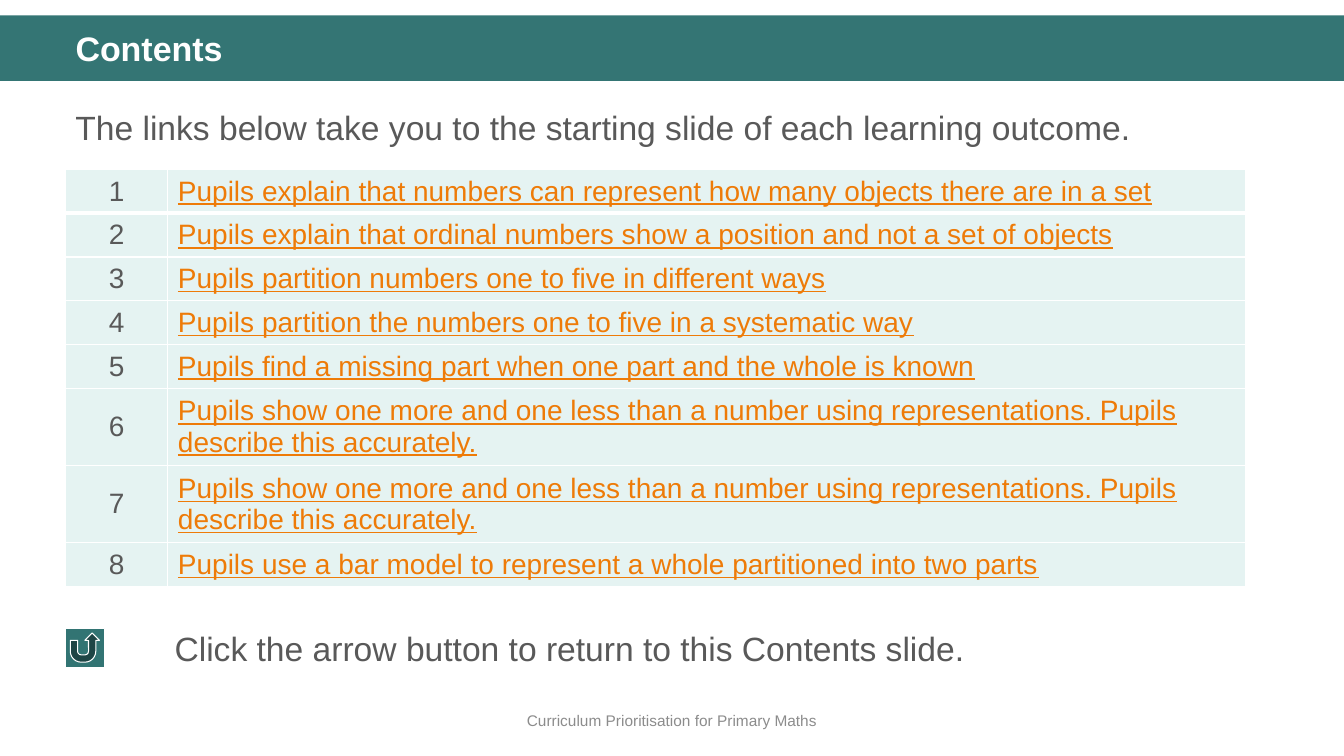
import pptx
import pptx.dml.color
import pptx.enum.shapes
import pptx.enum.text
import pptx.oxml
import pptx.oxml.ns
import pptx.util

Cm = pptx.util.Cm
Pt = pptx.util.Pt
RGBColor = pptx.dml.color.RGBColor
SHAPE = pptx.enum.shapes.MSO_SHAPE
ALIGN = pptx.enum.text.PP_ALIGN
ANCHOR = pptx.enum.text.MSO_ANCHOR

BAND_TEAL = RGBColor(0x34, 0x75, 0x74)
BUTTON_TEAL = RGBColor(0x32, 0x74, 0x73)
PALE_TEAL = RGBColor(0xE5, 0xF3, 0xF2)
ORANGE = RGBColor(0xEE, 0x7B, 0x08)
DARK_GREY = RGBColor(0x59, 0x59, 0x59)
FOOTER_GREY = RGBColor(0x8C, 0x8C, 0x8C)
WHITE = RGBColor(0xFF, 0xFF, 0xFF)

LEFT = 1.65
OUTCOMES = [
    "Pupils explain that numbers can represent how many objects there are in a set",
    "Pupils explain that ordinal numbers show a position and not a set of objects",
    "Pupils partition numbers one to five in different ways",
    "Pupils partition the numbers one to five in a systematic way",
    "Pupils find a missing part when one part and the whole is known",
    "Pupils show one more and one less than a number using representations. Pupils describe this accurately.",
    "Pupils show one more and one less than a number using representations. Pupils describe this accurately.",
    "Pupils use a bar model to represent a whole partitioned into two parts",
]


class ContentsPage:
    """Holds the style and the current slide, and adds each kind of element."""

    font_name = "Arial"

    def __init__(self, deck):
        """Add a title-only slide to the deck."""
        self.page = deck.slides.add_slide(deck.slide_layouts[5])

    def fill_text(self, frame, text, size, color, align=ALIGN.LEFT, spacing=1.0, bold=False, underline=False):
        """Fill a text frame with one styled paragraph."""
        frame.word_wrap = True
        para = frame.paragraphs[0]
        para.text = text
        para.alignment = align
        para.line_spacing = spacing
        para.space_before = Pt(0)
        font = para.font
        font.name = self.font_name
        font.size = Pt(size)
        font.color.rgb = color
        font.bold = bold
        font.underline = underline

    def title(self, text, left, top, width, height):
        """Place the title in front of the shapes added so far."""
        title = self.page.shapes.title
        title.left, title.top, title.width, title.height = Cm(left), Cm(top), Cm(width), Cm(height)
        title.text_frame.vertical_anchor = ANCHOR.TOP
        title.text_frame.auto_size = pptx.enum.text.MSO_AUTO_SIZE.NONE
        self.fill_text(title.text_frame, text, 24.3, WHITE, spacing=0.9, bold=True)
        title.element.getparent().append(title.element)

    def shape(self, kind, left, top, width, height, fill, line=None):
        """Add a filled preset shape, outlined if a line colour is given."""
        shape = self.page.shapes.add_shape(kind, Cm(left), Cm(top), Cm(width), Cm(height))
        shape.shadow.inherit = False
        shape.fill.solid()
        shape.fill.fore_color.rgb = fill
        if line is None:
            shape.line.fill.background()
        else:
            shape.line.color.rgb = line
            shape.line.width = Pt(0.75)

    def text(self, text, left, top, width, height, size=24, color=DARK_GREY, anchor=ANCHOR.TOP, **style):
        """Add a text box."""
        box = self.page.shapes.add_textbox(Cm(left), Cm(top), Cm(width), Cm(height))
        box.text_frame.vertical_anchor = anchor
        self.fill_text(box.text_frame, text, size, color, **style)

    def borders(self, cell, bottom):
        """Draw white borders round a table cell."""
        properties = cell._tc.get_or_add_tcPr()
        for side, width in (("L", 1), ("R", 1), ("T", 1), ("B", bottom)):
            properties.append(pptx.oxml.parse_xml(
                f'<a:ln{side} {pptx.oxml.ns.nsdecls("a")} w="{Pt(width)}">'
                f'<a:solidFill><a:srgbClr val="{WHITE}"/></a:solidFill></a:ln{side}>'
            ))

    def numbered_table(self, entries, left, top, widths, row_height):
        """Add a table of numbered, underlined entries."""
        frame = self.page.shapes.add_table(
            len(entries), len(widths), Cm(left), Cm(top), Cm(sum(widths)), Cm(row_height * len(entries)))
        table = frame.table
        table.horz_banding = False
        table.first_row = False
        for column, width in zip(table.columns, widths):
            column.width = Cm(width)
        for index, entry in enumerate(entries):
            number, outcome = table.rows[index].cells
            self.fill_text(number.text_frame, str(index + 1), 20, DARK_GREY, align=ALIGN.CENTER)
            self.fill_text(outcome.text_frame, entry, 20, ORANGE, underline=True)
            for cell in (number, outcome):
                cell.vertical_anchor = ANCHOR.MIDDLE
                self.borders(cell, 3 if index == 0 else 1)
                cell.fill.solid()
                cell.fill.fore_color.rgb = PALE_TEAL


def main():
    """Build the contents slide and save it."""
    deck = pptx.Presentation()
    deck.slide_width, deck.slide_height = Cm(33.87), Cm(19.05)
    contents = ContentsPage(deck)
    contents.shape(SHAPE.RECTANGLE, 0, 0.39, 33.87, 1.65, BAND_TEAL)
    contents.text("Curriculum Prioritisation for Primary Maths", 0, 17.65, 33.87, 1.02,
                  size=11, color=FOOTER_GREY, anchor=ANCHOR.MIDDLE, align=ALIGN.CENTER)
    contents.text("The links below take you to the starting slide of each learning outcome.",
                  LEFT, 2.36, 30.94, 8.92, spacing=1.2)
    contents.numbered_table(OUTCOMES, LEFT, 4.27, (2.58, 27.17), 1.04)
    contents.shape(SHAPE.ACTION_BUTTON_RETURN, LEFT, 15.83, 0.98, 0.98, BUTTON_TEAL, WHITE)
    contents.text("Click the arrow button to return to this Contents slide.", 4.15, 15.7, 28.75, 1.28)
    contents.title("Contents", LEFT, 0.69, 30.94, 1.2)
    deck.save("out.pptx")


if __name__ == "__main__":
    main()
